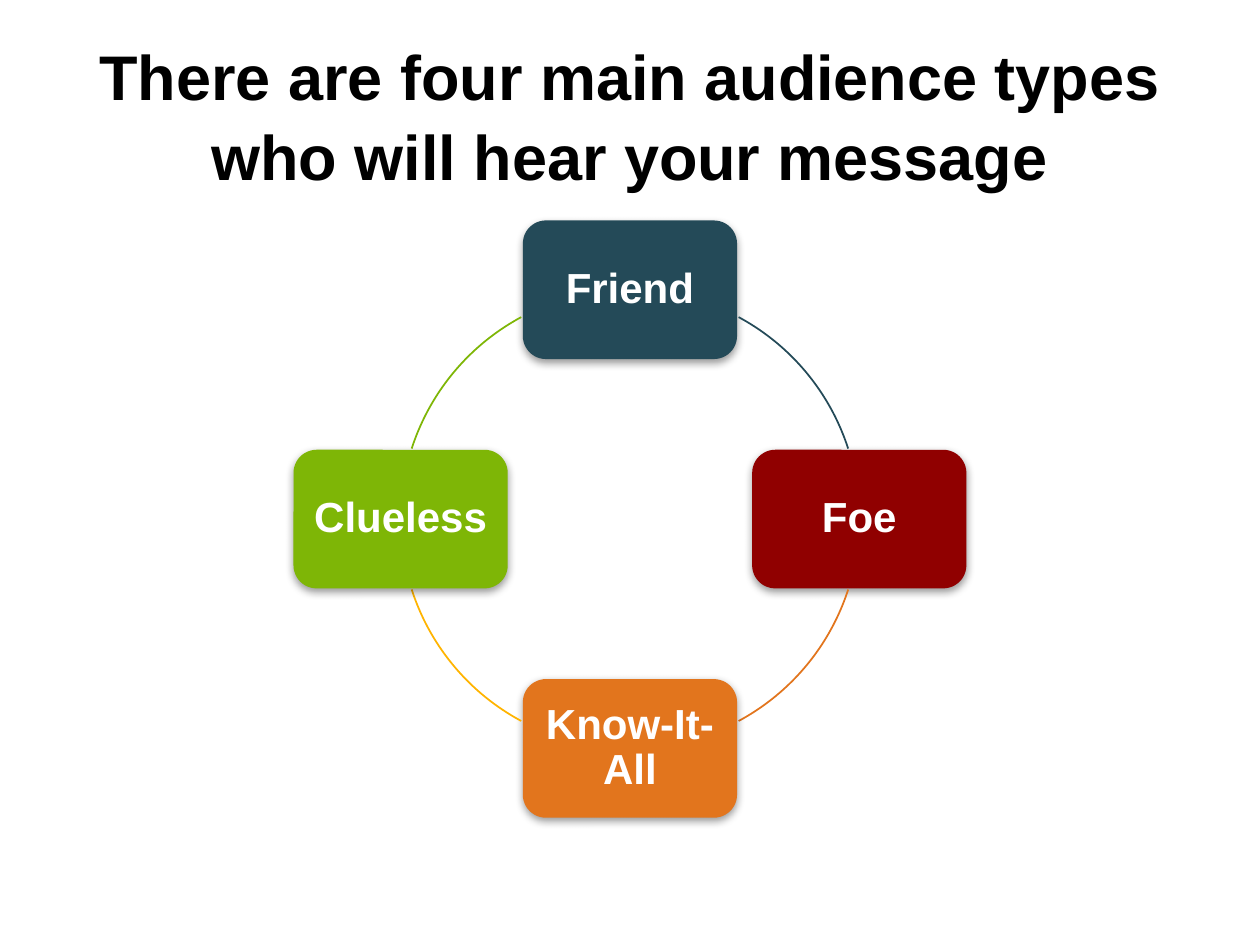
import math
from dataclasses import dataclass
from lxml import etree
from pptx import Presentation
from pptx import util as u
from pptx.dml.color import RGBColor
from pptx.enum import shapes, text
from pptx.oxml.ns import qn


@dataclass(frozen=True)
class Theme:
    font: str = "Arial"
    title_size: int = 36
    node_size: int = 24
    title_color: str = "000000"
    node_text: str = "FFFFFF"
    shadow: str = "000000"
    navy: str = "244A58"
    red: str = "900000"
    orange: str = "E2751D"
    amber: str = "FFB400"
    green: str = "7EB606"


@dataclass(frozen=True)
class Box:
    left: float
    top: float
    width: float
    height: float

    def place(self):
        return [round(CELL * side) for side in (self.left, self.top, self.width, self.height)]


THEME = Theme()
COLUMNS, ROWS = 100, 75
CELL = u.Inches(10) / COLUMNS
NODE_COLUMNS, NODE_ROWS = 17, 11
VERTICAL_GAP, SIDE_GAP = 28.3, 17.9
AUDIENCES = [
    ("Friend", THEME.navy, THEME.navy),
    ("Foe", THEME.red, THEME.orange),
    ("Know-It-All", THEME.orange, THEME.amber),
    ("Clueless", THEME.green, THEME.green),
]


def write(shape, wording, size, color, spacing):
    shape.text_frame.word_wrap = True
    paragraph = shape.text_frame.paragraphs[0]
    paragraph.text = wording
    paragraph.alignment = text.PP_ALIGN.CENTER
    paragraph.line_spacing = spacing
    paragraph.font.name = THEME.font
    paragraph.font.size = u.Pt(size)
    paragraph.font.bold = True
    paragraph.font.color.rgb = RGBColor.from_string(color)


def add_soft_shadow(shape):
    shape.shadow.inherit = False
    effects = shape._element.spPr.find(qn("a:effectLst"))
    shadow = etree.SubElement(
        effects, qn("a:outerShdw"), blurRad=str(u.Pt(5)), dist=str(u.Pt(2)),
        dir=str(90 * 60000), rotWithShape="0")
    color = etree.SubElement(shadow, qn("a:srgbClr"), val=THEME.shadow)
    etree.SubElement(color, qn("a:alpha"), val="40000")


def add_title(slide, box):
    title = slide.shapes.add_textbox(*box.place())
    title.text_frame.vertical_anchor = text.MSO_ANCHOR.BOTTOM
    write(title, "There are four main audience types who will hear your message",
          THEME.title_size, THEME.title_color, 1.05)


def add_node(slide, box, wording, color):
    node = slide.shapes.add_shape(shapes.MSO_SHAPE.ROUNDED_RECTANGLE, *box.place())
    node.fill.solid()
    node.fill.fore_color.rgb = RGBColor.from_string(color)
    node.line.fill.background()
    add_soft_shadow(node)
    frame = node.text_frame
    frame.margin_left = frame.margin_right = u.Inches(0.1)
    frame.margin_top = frame.margin_bottom = u.Inches(0.1)
    frame.vertical_anchor = text.MSO_ANCHOR.MIDDLE
    write(node, wording, THEME.node_size, THEME.node_text, 0.9)


def add_arc(slide, box, start, end, color):
    arc = slide.shapes.add_shape(shapes.MSO_SHAPE.ARC, *box.place())
    for index, angle in enumerate((start, end)):
        arc.adjustments[index] = angle % 360 * 0.6
    arc.fill.background()
    arc.line.color.rgb = RGBColor.from_string(color)
    arc.line.width = u.Pt(1)
    arc.shadow.inherit = False


def add_cycle(slide, box):
    radius = box.width / 2
    center_x, center_y = box.left + radius, box.top + radius
    gaps = (VERTICAL_GAP, SIDE_GAP)
    for index, (wording, fill, arc_color) in enumerate(AUDIENCES):
        angle = 90 * index - 90
        x = center_x + radius * math.cos(math.radians(angle))
        y = center_y + radius * math.sin(math.radians(angle))
        node_box = Box(x - NODE_COLUMNS / 2, y - NODE_ROWS / 2, NODE_COLUMNS, NODE_ROWS)
        add_node(slide, node_box, wording, fill)
        start = angle + gaps[index % 2]
        end = angle + 90 - gaps[(index + 1) % 2]
        add_arc(slide, box, start, end, arc_color)


def main():
    presentation = Presentation()
    presentation.slide_width = round(CELL * COLUMNS)
    presentation.slide_height = round(CELL * ROWS)
    slide = presentation.slides.add_slide(presentation.slide_layouts[6])
    add_title(slide, Box(6, 1.2, 88, 14.6))
    add_cycle(slide, Box(31.8, 23, 36.4, 36.4))
    presentation.save("out.pptx")


if __name__ == "__main__":
    main()
